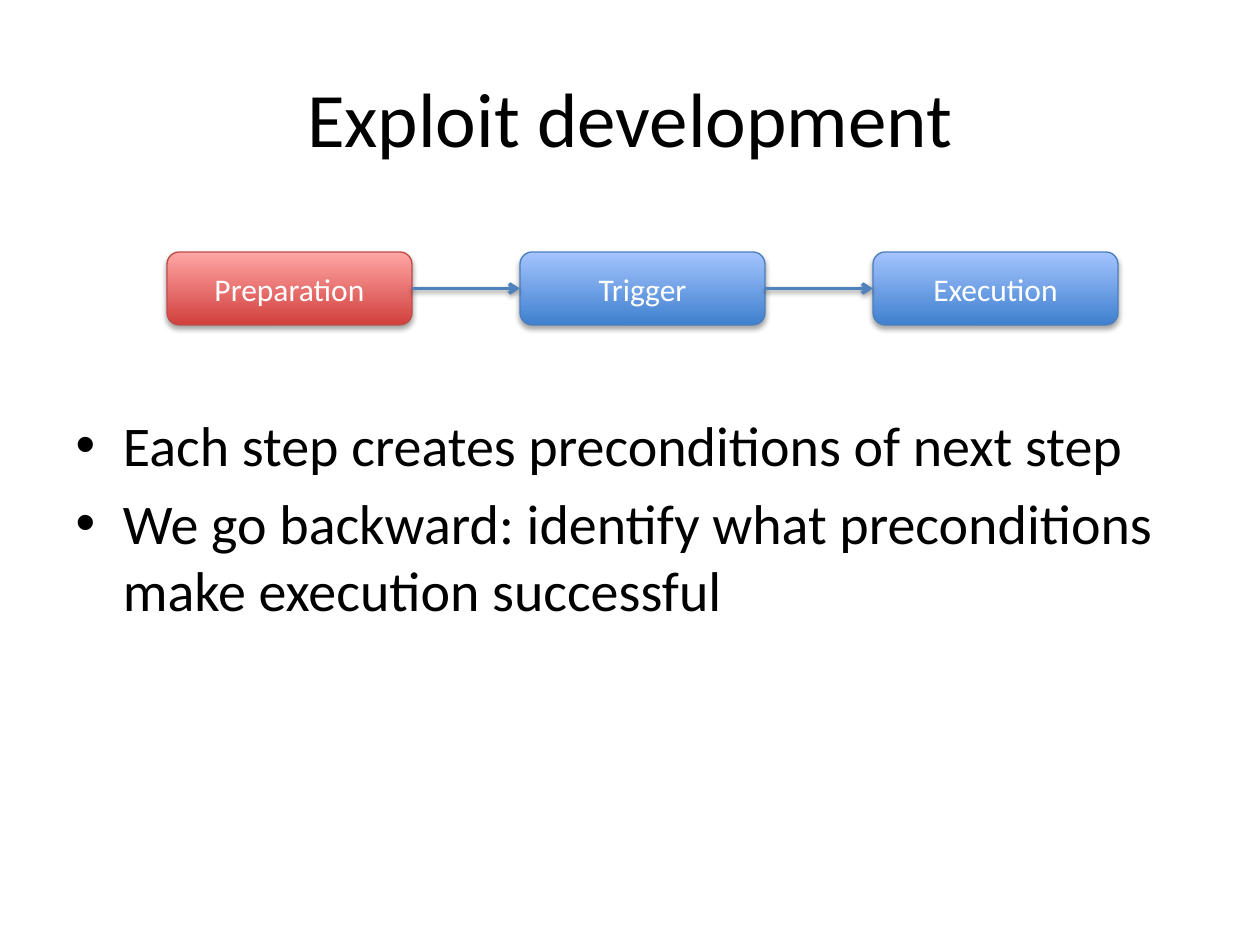
from dataclasses import dataclass
from itertools import pairwise

from lxml.etree import SubElement
from pptx import Presentation
from pptx.dml.color import RGBColor
from pptx.enum.shapes import MSO_CONNECTOR as Connector, MSO_SHAPE as Shape
from pptx.enum.text import MSO_ANCHOR as Anchor, PP_ALIGN as Align
from pptx.oxml.ns import qn
from pptx.util import Emu, Pt

SLIDE_WIDTH, SLIDE_HEIGHT = 1260, 945
EMU_PER_PX = 914400 / 126


@dataclass(frozen=True)
class Theme:
    font: str = "Calibri"
    title_size: int = 44
    body_size: int = 32
    step_size: int = 18
    text: str = "000000"
    step_text: str = "FFFFFF"
    arrow: str = "4F81BD"
    # Step colours: gradient bottom, gradient top, outline
    current: tuple = ("D1403C", "FFA6A5", "BF4C48")
    upcoming: tuple = ("3F80CE", "A4C4FF", "4B7EBC")


THEME = Theme()


def px(value):
    return Emu(round(value * EMU_PER_PX))


def place(shape, box):
    for name, value in zip(("left", "top", "width", "height"), box):
        setattr(shape, name, px(value))


def format_paragraph(paragraph, size, color, align):
    paragraph.alignment = align
    font_format = {"name": THEME.font, "size": Pt(size)}
    for name, value in font_format.items():
        setattr(paragraph.font, name, value)
    paragraph.font.color.rgb = RGBColor.from_string(color)


def set_line(line, color, width):
    line.color.rgb = RGBColor.from_string(color)
    line.width = Pt(width)


def add_shadow(properties, opacity, distance):
    """Drop a soft black shadow straight down."""
    effects = properties.find(qn("a:effectLst"))
    if effects is None:
        effects = SubElement(properties, qn("a:effectLst"))
    shadow = SubElement(effects, qn("a:outerShdw"), blurRad=str(Pt(3.1)),
                        dist=str(Pt(distance)), dir="5400000", rotWithShape="0")
    color = SubElement(shadow, qn("a:srgbClr"), val="000000")
    SubElement(color, qn("a:alpha"), val=str(opacity * 1000))


def fill_title(shape, box, text):
    place(shape, box)
    shape.text_frame.text = text
    shape.text_frame.vertical_anchor = Anchor.MIDDLE
    format_paragraph(shape.text_frame.paragraphs[0], THEME.title_size, THEME.text, Align.CENTER)


def fill_bullets(shape, box, lines):
    place(shape, box)
    shape.text_frame.text = "\n".join(lines)
    for paragraph in shape.text_frame.paragraphs:
        format_paragraph(paragraph, THEME.body_size, THEME.text, Align.LEFT)


def add_step(slide, box, text, colors):
    bottom, top, outline = colors
    shape = slide.shapes.add_shape(Shape.ROUNDED_RECTANGLE, *map(px, box))
    shape.fill.gradient()
    shape.fill.gradient_angle = 90
    for stop, color in zip(shape.fill.gradient_stops, (bottom, top)):
        stop.color.rgb = RGBColor.from_string(color)
    set_line(shape.line, outline, 0.75)
    shape.shadow.inherit = False
    add_shadow(shape._element.spPr, opacity=35, distance=1.8)
    shape.text_frame.text = text
    shape.text_frame.vertical_anchor = Anchor.MIDDLE
    format_paragraph(shape.text_frame.paragraphs[0], THEME.step_size, THEME.step_text, Align.CENTER)
    return shape


def add_arrow(slide, source, target):
    arrow = slide.shapes.add_connector(Connector.STRAIGHT, 0, 0, 0, 0)
    arrow.begin_connect(source, 3)
    arrow.end_connect(target, 1)
    set_line(arrow.line, THEME.arrow, 2)
    properties = arrow._element.spPr
    SubElement(properties.find(qn("a:ln")), qn("a:tailEnd"), type="arrow")
    add_shadow(properties, opacity=38, distance=1.6)


def add_process(slide, box, steps, step_width):
    """Spread the steps evenly over the box and join them with arrows."""
    left, top, width, height = box
    pitch = (width - step_width) / (len(steps) - 1)
    shapes = [add_step(slide, (left + index * pitch, top, step_width, height), text, colors)
              for index, (text, colors) in enumerate(steps)]
    for source, target in pairwise(shapes):
        add_arrow(slide, source, target)


def main():
    presentation = Presentation()
    presentation.slide_width = px(SLIDE_WIDTH)
    presentation.slide_height = px(SLIDE_HEIGHT)
    slide = presentation.slides.add_slide(presentation.slide_layouts[1])

    # Title and explanation
    fill_title(slide.shapes.title, (63, 38, 1134, 157), "Exploit development")
    fill_bullets(slide.placeholders[1], (63, 404, 1134, 440), [
        "Each step creates preconditions of next step",
        "We go backward: identify what preconditions make execution successful",
    ])

    # Three-step process
    add_process(slide, (167, 252, 951, 73), [
        ("Preparation", THEME.current),
        ("Trigger", THEME.upcoming),
        ("Execution", THEME.upcoming),
    ], step_width=245)

    presentation.save("out.pptx")


if __name__ == "__main__":
    main()
